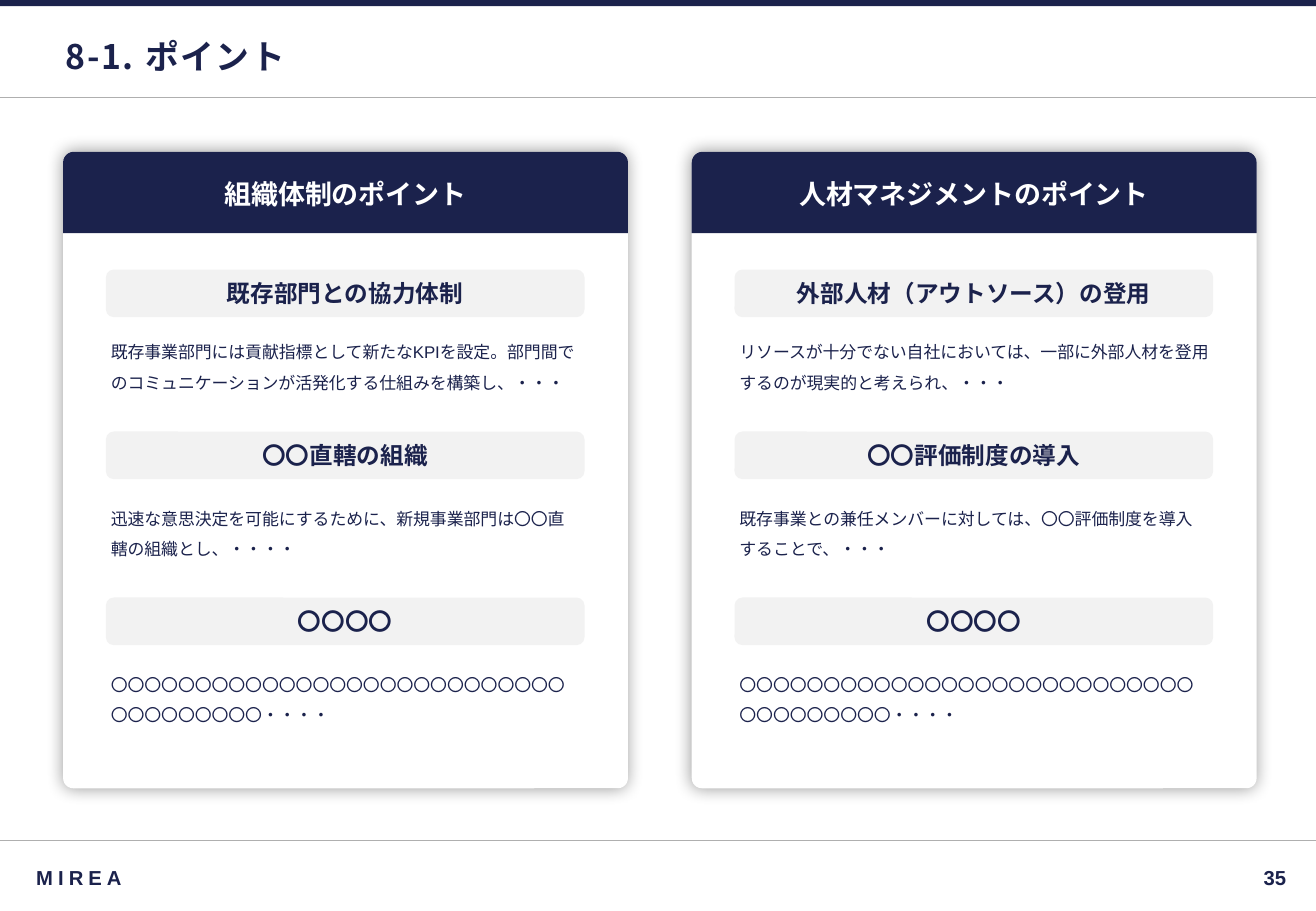
from dataclasses import dataclass
from typing import Optional

from lxml.etree import SubElement
from pptx import Presentation
from pptx.dml.color import RGBColor
from pptx.enum.lang import MSO_LANGUAGE_ID as Lang
from pptx.enum.shapes import MSO_CONNECTOR, MSO_SHAPE
from pptx.enum.text import MSO_ANCHOR, MSO_AUTO_SIZE, PP_ALIGN
from pptx.oxml.ns import qn
from pptx.shapes.autoshape import Shape
from pptx.slide import Slide
from pptx.util import Pt

NAVY = RGBColor(0x1B, 0x22, 0x4C)
WHITE = RGBColor(0xFF, 0xFF, 0xFF)
PALE_GRAY = RGBColor(0xF2, 0xF2, 0xF2)
RULE_GRAY = RGBColor(0xAF, 0xAF, 0xAF)

ARIAL = "Arial"
NOTO = "Noto Sans CJK JP"

SLIDE_WIDTH, SLIDE_HEIGHT = 780, 540
CARD_LEFT, CARD_TOP, CARD_PITCH = 37.4, 90, 372.6
CARD_WIDTH, CARD_HEIGHT, HEADER_HEIGHT = 334.8, 377.3, 48.2
POINT_INSET, POINT_WIDTH = 25.4, 283.7
HEADING_TOPS = (159.8, 255.8, 354.2)
BODY_TOPS = (193.7, 292.3, 391)
HEADING_HEIGHT, BODY_HEIGHT = 28.2, 56.9


@dataclass(frozen=True)
class TextStyle:
    size: float
    font: str = ARIAL
    color: RGBColor = NAVY
    bold: bool = True
    align: PP_ALIGN = PP_ALIGN.LEFT
    anchor: MSO_ANCHOR = MSO_ANCHOR.MIDDLE
    inset: float = 2.9
    tracking: float = 0
    line_spacing: Optional[float] = None


@dataclass(frozen=True)
class Point:
    heading: str
    body: str
    heading_font: str = ARIAL


@dataclass(frozen=True)
class Card:
    header: str
    points: tuple[Point, ...]


OPEN_POINT = Point("〇〇〇〇", "〇" * 36 + "・・・・")
CARDS = (
    Card("組織体制のポイント", (
        Point("既存部門との協力体制",
              "既存事業部門には貢献指標として新たなKPIを設定。部門間での"
              "コミュニケーションが活発化する仕組みを構築し、・・・", NOTO),
        Point("〇〇直轄の組織",
              "迅速な意思決定を可能にするために、新規事業部門は〇〇直轄の組織とし、・・・・"),
        OPEN_POINT,
    )),
    Card("人材マネジメントのポイント", (
        Point("外部人材（アウトソース）の登用",
              "リソースが十分でない自社においては、一部に外部人材を登用するのが"
              "現実的と考えられ、・・・", NOTO),
        Point("〇〇評価制度の導入",
              "既存事業との兼任メンバーに対しては、〇〇評価制度を導入することで、・・・"),
        OPEN_POINT,
    )),
)

TITLE_STYLE = TextStyle(20, NOTO, tracking=1)
BRAND_STYLE = TextStyle(12, inset=7.2, tracking=3)
PAGE_STYLE = TextStyle(12, align=PP_ALIGN.RIGHT)
HEADER_STYLE = TextStyle(16, color=WHITE, align=PP_ALIGN.CENTER, inset=5.8)
BODY_STYLE = TextStyle(10, bold=False, anchor=MSO_ANCHOR.TOP, line_spacing=1.5)


def write(shape: Shape, text: str, style: TextStyle) -> None:
    frame = shape.text_frame
    frame.text = text
    frame.word_wrap = True
    frame.auto_size = MSO_AUTO_SIZE.NONE
    frame.vertical_anchor = style.anchor
    frame.margin_left = frame.margin_right = Pt(style.inset)
    frame.margin_top = frame.margin_bottom = Pt(min(style.inset, 3.6))
    paragraph = frame.paragraphs[0]
    paragraph.alignment = style.align
    if style.line_spacing:
        paragraph.line_spacing = style.line_spacing
    font = paragraph.font
    font.name, font.size, font.bold = style.font, Pt(style.size), style.bold
    font.color.rgb = style.color
    font.language_id = Lang.JAPANESE
    # East Asian typeface and letter spacing
    properties = paragraph._p.get_or_add_pPr().get_or_add_defRPr()
    SubElement(properties, qn("a:ea"), typeface=style.font)
    if style.tracking:
        properties.set("spc", str(round(style.tracking * 100)))


def add_text(slide: Slide, left: float, top: float, width: float, height: float,
             text: str, style: TextStyle) -> None:
    box = slide.shapes.add_textbox(Pt(left), Pt(top), Pt(width), Pt(height))
    write(box, text, style)


def add_block(slide: Slide, kind: MSO_SHAPE, left: float, top: float, width: float,
              height: float, color: RGBColor) -> Shape:
    block = slide.shapes.add_shape(kind, Pt(left), Pt(top), Pt(width), Pt(height))
    block.shadow.inherit = False
    block.fill.solid()
    block.fill.fore_color.rgb = color
    block.line.fill.background()
    return block


def add_rule(slide: Slide, top: float) -> None:
    rule = slide.shapes.add_connector(
        MSO_CONNECTOR.STRAIGHT, Pt(0), Pt(top), Pt(SLIDE_WIDTH), Pt(top))
    rule.line.color.rgb = RULE_GRAY
    rule.line.width = Pt(0.75)
    SubElement(rule._element.spPr, qn("a:effectLst"))


def add_glow_shadow(block: Shape) -> None:
    effects = block._element.spPr.find(qn("a:effectLst"))
    shadow = SubElement(effects, qn("a:outerShdw"), blurRad=str(Pt(10)),
                        algn="ctr", rotWithShape="0")
    black = SubElement(shadow, qn("a:srgbClr"), val="000000")
    SubElement(black, qn("a:alpha"), val="40000")


def add_card(slide: Slide, left: float, card: Card) -> None:
    panel = add_block(slide, MSO_SHAPE.ROUNDED_RECTANGLE, left, CARD_TOP,
                      CARD_WIDTH, CARD_HEIGHT, WHITE)
    panel.adjustments[0] = 0.018
    add_glow_shadow(panel)
    header = add_block(slide, MSO_SHAPE.ROUND_2_SAME_RECTANGLE, left, CARD_TOP,
                       CARD_WIDTH, HEADER_HEIGHT, NAVY)
    header.adjustments[0] = 0.13
    write(header, card.header, HEADER_STYLE)

    point_left = left + POINT_INSET
    for point, heading_top, body_top in zip(card.points, HEADING_TOPS, BODY_TOPS):
        heading = add_block(slide, MSO_SHAPE.ROUNDED_RECTANGLE, point_left,
                            heading_top, POINT_WIDTH, HEADING_HEIGHT, PALE_GRAY)
        write(heading, point.heading,
              TextStyle(14, point.heading_font, align=PP_ALIGN.CENTER))
        add_text(slide, point_left, body_top, POINT_WIDTH, BODY_HEIGHT,
                 point.body, BODY_STYLE)


def main() -> None:
    presentation = Presentation()
    presentation.slide_width = Pt(SLIDE_WIDTH)
    presentation.slide_height = Pt(SLIDE_HEIGHT)
    slide = presentation.slides.add_slide(presentation.slide_layouts[5])

    # Frame: top bar, rules and title
    add_block(slide, MSO_SHAPE.RECTANGLE, 0, 0, SLIDE_WIDTH, 3.7, NAVY)
    for rule_top in (57.7, 498):
        add_rule(slide, rule_top)
    title = slide.shapes.title
    title.left, title.top = Pt(36), Pt(15.1)
    title.width, title.height = Pt(708.5), Pt(36.7)
    write(title, "8-1. ポイント", TITLE_STYLE)

    # Footer
    add_text(slide, 14.4, 509, 623.5, 22.3, "MIREA", BRAND_STYLE)
    add_text(slide, 652.3, 509, 113, 22.3, "35", PAGE_STYLE)

    # Cards
    for column, card in enumerate(CARDS):
        add_card(slide, CARD_LEFT + column * CARD_PITCH, card)

    presentation.save("out.pptx")


if __name__ == "__main__":
    main()
